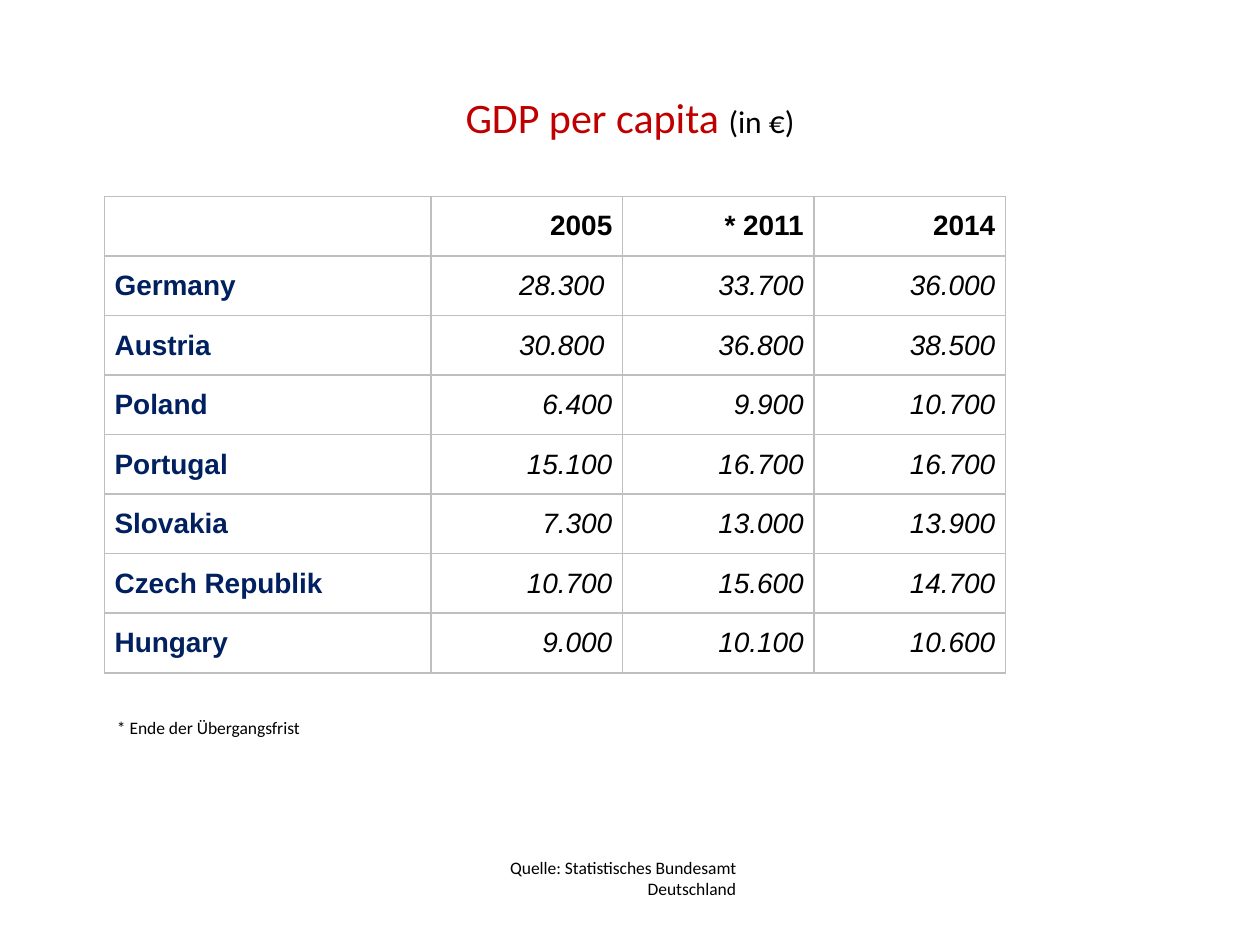
import lxml.etree
import pptx
import pptx.dml.color
import pptx.enum.text
import pptx.oxml.ns
import pptx.util

Inches = pptx.util.Inches
Pt = pptx.util.Pt
RGBColor = pptx.dml.color.RGBColor
Align = pptx.enum.text.PP_ALIGN
Anchor = pptx.enum.text.MSO_ANCHOR

RED = RGBColor(0xC0, 0x00, 0x00)
NAVY = RGBColor(0x00, 0x20, 0x60)
BLACK = RGBColor(0x00, 0x00, 0x00)
GRAY = RGBColor(0xBF, 0xBF, 0xBF)

HEADING = {"name": "Calibri", "size": Pt(24)}
UNIT = {"name": "Calibri", "size": Pt(18)}
NOTE = {"name": "Calibri", "size": Pt(10)}
LABEL = {"name": "Arial", "size": Pt(16), "bold": True, "italic": False}
FIGURE = {"name": "Arial", "size": Pt(16), "bold": False, "italic": True}

GDP_ROWS = [
    ("", "2005", "* 2011", "2014"),
    ("Germany", "28.300 ", "33.700", "36.000"),
    ("Austria", "30.800 ", "36.800", "38.500"),
    ("Poland", "6.400", "9.900", "10.700"),
    ("Portugal", "15.100", "16.700", "16.700"),
    ("Slovakia", "7.300", "13.000", "13.900"),
    ("Czech Republik", "10.700", "15.600", "14.700"),
    ("Hungary", "9.000", "10.100", "10.600"),
]
COLUMN_WIDTHS = (2.59, 1.52, 1.52, 1.52)


class SlideBuilder:
    def __init__(self, deck):
        self.page = deck.slides.add_slide(deck.slide_layouts[5])

    def add_text(self, para, text, style, color, align=Align.LEFT):
        para.alignment = align
        span = para.add_run()
        span.text = text
        for attribute, value in style.items():
            setattr(span.font, attribute, value)
        span.font.color.rgb = color

    def title(self, parts, left, top, width, height):
        box = self.page.shapes.title
        place = {"left": left, "top": top, "width": width, "height": height}
        for attribute, value in place.items():
            setattr(box, attribute, Inches(value))
        box.text_frame.vertical_anchor = Anchor.MIDDLE
        for text, style, color in parts:
            self.add_text(box.text_frame.paragraphs[0], text, style, color, Align.CENTER)

    def note(self, text, left, top, width, height, align=Align.LEFT):
        box = self.page.shapes.add_textbox(
            Inches(left), Inches(top), Inches(width), Inches(height))
        box.text_frame.word_wrap = True
        self.add_text(box.text_frame.paragraphs[0], text, NOTE, BLACK, align)

    def border(self, cell):
        properties = cell._tc.get_or_add_tcPr()
        qn = pptx.oxml.ns.qn
        for position, side in enumerate(("a:lnL", "a:lnR", "a:lnT", "a:lnB")):
            line = lxml.etree.Element(qn(side), w=str(Pt(1)))
            fill = lxml.etree.SubElement(line, qn("a:solidFill"))
            lxml.etree.SubElement(fill, qn("a:srgbClr"), val=str(GRAY))
            properties.insert(position, line)

    def table(self, rows, widths, left, top, height):
        frame = self.page.shapes.add_table(
            len(rows), len(widths), Inches(left), Inches(top),
            Inches(sum(widths)), Inches(height))
        grid = frame.table
        grid.first_row = grid.horz_banding = False
        for column, width in zip(grid.columns, widths):
            column.width = Inches(width)
        for row_index, values in enumerate(rows):
            for column_index, text in enumerate(values):
                cell = grid.cell(row_index, column_index)
                cell.fill.background()
                self.border(cell)
                cell.vertical_anchor = Anchor.MIDDLE
                for side in ("left", "right", "top", "bottom"):
                    setattr(cell, f"margin_{side}", Inches(0.08))
                if not text:
                    continue
                is_country = column_index == 0
                style = LABEL if is_country or row_index == 0 else FIGURE
                self.add_text(cell.text_frame.paragraphs[0], text, style,
                              NAVY if is_country else BLACK,
                              Align.LEFT if is_country else Align.RIGHT)


def main():
    deck = pptx.Presentation()
    deck.slide_width, deck.slide_height = Inches(10), Inches(7.5)
    slide = SlideBuilder(deck)

    # Title with the unit
    slide.title([("GDP per capita ", HEADING, RED), ("(in €)", UNIT, BLACK)],
                0.5, 0.3, 9, 1.25)

    # GDP by country and year
    slide.table(GDP_ROWS, COLUMN_WIDTHS, 0.83, 1.56, 3.78)

    # Source and footnote
    slide.note("Quelle: Statistisches Bundesamt Deutschland",
               3.74, 6.75, 2.2, 0.46, Align.RIGHT)
    slide.note("* Ende der Übergangsfrist", 0.83, 5.64, 2.83, 0.47)

    deck.save("out.pptx")


if __name__ == "__main__":
    main()
